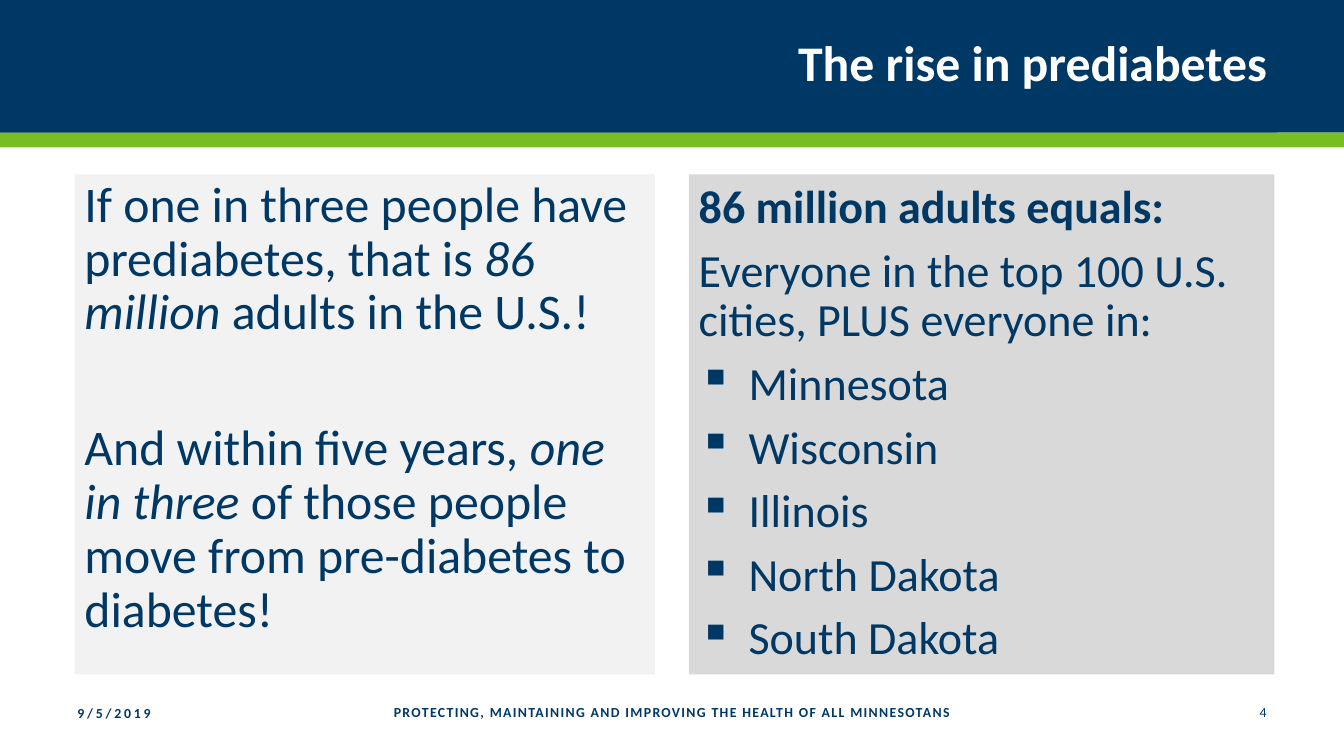
"""Build the slide about the rise in prediabetes."""
from lxml import etree
from pptx import Presentation
from pptx.dml.color import RGBColor
from pptx.enum.shapes import MSO_SHAPE
from pptx.enum.text import MSO_ANCHOR, PP_ALIGN
from pptx.oxml.ns import qn
from pptx.util import Emu, Pt

PX = 9144
NAVY = RGBColor(0x00, 0x38, 0x65)
GREEN = RGBColor(0x78, 0xBE, 0x21)
WHITE = RGBColor(0xFF, 0xFF, 0xFF)
PALE_GRAY = RGBColor(0xF2, 0xF2, 0xF2)
MID_GRAY = RGBColor(0xD9, 0xD9, 0xD9)
RECTANGLE = MSO_SHAPE.RECTANGLE
TOP, MIDDLE = MSO_ANCHOR.TOP, MSO_ANCHOR.MIDDLE
LEFT, CENTER, RIGHT = PP_ALIGN.LEFT, PP_ALIGN.CENTER, PP_ALIGN.RIGHT

presentation = Presentation()
presentation.slide_width = Emu(1350 * PX)
presentation.slide_height = Emu(750 * PX)
slide = presentation.slides.add_slide(presentation.slide_layouts[6])


def add_panel(left, top, width, height, color, anchor=MIDDLE):
    shape = slide.shapes.add_shape(
        RECTANGLE, *(Emu(value * PX) for value in (left, top, width, height)))
    shape.shadow.inherit = False
    shape.fill.solid()
    shape.fill.fore_color.rgb = color
    shape.line.fill.background()
    shape.text_frame.word_wrap = True
    shape.text_frame.vertical_anchor = anchor
    return shape.text_frame


def format_paragraph(paragraph, size, color=NAVY, bold=False, align=LEFT):
    paragraph.alignment = align
    paragraph.font.name = "Calibri"
    paragraph.font.size = Pt(size)
    paragraph.font.color.rgb = color
    paragraph.font.bold = bold


add_panel(0, 133, 1350, 15, GREEN)
add_panel(0, 0, 1350, 133, NAVY)

title = add_panel(0, -1, 1283, 134, NAVY).paragraphs[0]
title.text = "The rise in prediabetes"
title.line_spacing = 0.9
format_paragraph(title, 36, WHITE, True, RIGHT)

statements = [
    (10, [("If one in three people have prediabetes, that is ", False),
          ("86 million", True), (" adults in the U.S.!", False)]),
    (59.5, [("And within five years, ", False), ("one in three ", True),
            ("of those people move from pre-diabetes to diabetes!", False)]),
]
statement_frame = add_panel(75, 175, 583, 502, PALE_GRAY, TOP)
for index, (space, runs) in enumerate(statements):
    paragraph = statement_frame.add_paragraph() if index else statement_frame.paragraphs[0]
    paragraph.line_spacing = 0.9
    paragraph.space_before = Pt(space)
    format_paragraph(paragraph, 36)
    for text, italic in runs:
        run = paragraph.add_run()
        run.text = text
        run.font.italic = italic

comparison = [
    "86 million adults equals:",
    "Everyone in the top 100 U.S. cities, PLUS everyone in:",
    "Minnesota", "Wisconsin", "Illinois", "North Dakota", "South Dakota",
]
comparison_frame = add_panel(692, 175, 588, 502, MID_GRAY)
for index, text in enumerate(comparison):
    paragraph = comparison_frame.add_paragraph() if index else comparison_frame.paragraphs[0]
    paragraph.text = text
    paragraph.line_spacing = 0.9
    paragraph.space_before = Pt(10)
    format_paragraph(paragraph, 33.3, bold=index == 0)
    if index >= 2:
        properties = paragraph._p.get_or_add_pPr()
        properties.set("marL", str(50 * PX))
        properties.set("indent", str(-50 * PX))
        bullet = etree.Element(qn("a:buChar"), char="▪")
        properties.find(qn("a:defRPr")).addprevious(bullet)

footers = [
    (68, 696, 154, "9/5/2019", True, LEFT, 200),
    (222, 695, 906, "PROTECTING, MAINTAINING AND IMPROVING THE HEALTH OF ALL MINNESOTANS",
     True, CENTER, 100),
    (1128, 695, 154, "4", False, RIGHT, 200),
]
for left, top, width, text, bold, align, tracking in footers:
    box = slide.shapes.add_textbox(*(Emu(value * PX) for value in (left, top, width, 40)))
    box.text_frame.word_wrap = True
    box.text_frame.vertical_anchor = MIDDLE
    paragraph = box.text_frame.paragraphs[0]
    paragraph.text = text
    format_paragraph(paragraph, 10, bold=bold, align=align)
    paragraph.runs[0]._r.get_or_add_rPr().set("spc", str(tracking))

presentation.save("out.pptx")
